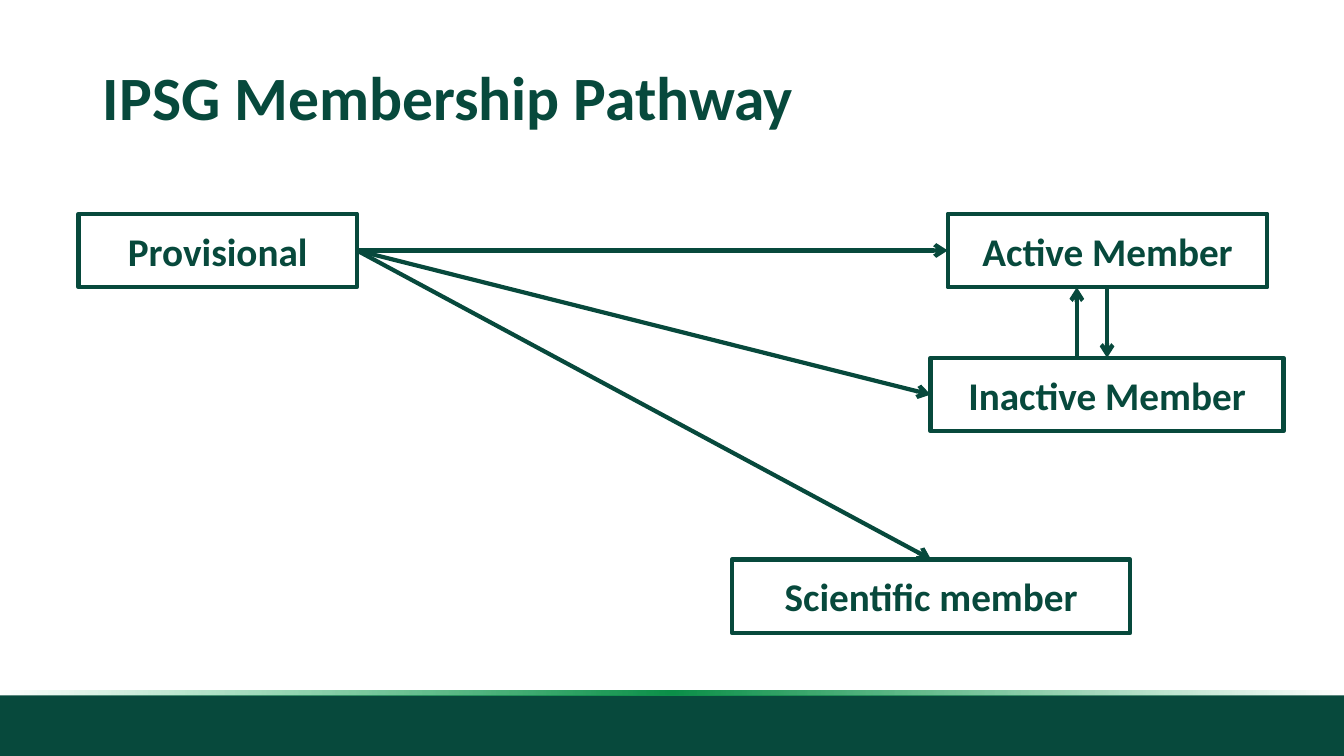
"""Build the membership pathway slide."""
from dataclasses import dataclass

from lxml import etree
from pptx import Presentation
from pptx.dml.color import RGBColor
from pptx.enum import shapes, text
from pptx.oxml.ns import qn
from pptx.util import Inches, Pt

TITLE = "IPSG Membership Pathway"
BOX_HEIGHT = 0.73
BOXES = {
    "Active Member": (9.4, 2.12, 3.17),
    "Provisional": (0.78, 2.12, 2.76),
    "Inactive Member": (9.23, 3.55, 3.5),
    "Scientific member": (7.26, 5.55, 3.95),
}
TOP, LEFT, RIGHT = 0, 1, 3
PATHS = [("Active Member", LEFT), ("Inactive Member", LEFT), ("Scientific member", TOP)]
RETURN_X, LEAVE_X = 10.68, 10.98
BAND_TOP = 6.9
GLOW_HEIGHT = 0.05
GLOW_STOPS = [(0, "0D9D4F", 0), (50, "0C9049", 100), (100, "0FAB56", 0)]


@dataclass(frozen=True)
class Theme:
    green: RGBColor = RGBColor.from_string("07493C")
    font: str = "Calibri"
    title: int = 44
    label: int = 28
    line: int = 3


THEME = Theme()


def write(sp, words, size, align, spacing=1.0):
    """Write one bold, vertically centred paragraph in a shape."""
    tf = sp.text_frame
    tf.word_wrap = True
    tf.auto_size = text.MSO_AUTO_SIZE.NONE
    tf.vertical_anchor = text.MSO_ANCHOR.MIDDLE
    p = tf.paragraphs[0]
    p.alignment = align
    p.line_spacing = spacing
    r = p.add_run()
    r.text = words
    r.font.name, r.font.size, r.font.bold = THEME.font, Pt(size), True
    r.font.color.rgb = THEME.green


def add_rect(s, left, top, width, height):
    """Add a rectangle without shadow."""
    sp = s.shapes.add_shape(shapes.MSO_SHAPE.RECTANGLE, *map(Inches, (left, top, width, height)))
    sp.shadow.inherit = False
    return sp


def add_footer(s, width):
    """Add the footer band and the fading strip above it."""
    band = add_rect(s, 0, BAND_TOP, width, 7.5 - BAND_TOP)
    band.fill.solid()
    band.fill.fore_color.rgb = THEME.green
    band.line.fill.background()
    glow = add_rect(s, 0, BAND_TOP - GLOW_HEIGHT, width, GLOW_HEIGHT)
    glow.line.fill.background()
    glow.fill.gradient()
    glow.fill.gradient_angle = 180
    stops = glow._element.spPr.find(".//" + qn("a:gsLst"))
    for old in list(stops):
        stops.remove(old)
    for pos, color, alpha in GLOW_STOPS:
        gs = etree.SubElement(stops, qn("a:gs"), pos=str(pos * 1000))
        clr = etree.SubElement(gs, qn("a:srgbClr"), val=color)
        etree.SubElement(clr, qn("a:alpha"), val=str(alpha * 1000))


def add_box(s, label, left, top, width):
    """Add one outlined membership box."""
    sp = add_rect(s, left, top, width, BOX_HEIGHT)
    sp.fill.background()
    sp.line.color.rgb = THEME.green
    sp.line.width = Pt(THEME.line)
    write(sp, label, THEME.label, text.PP_ALIGN.CENTER)
    return sp


def add_arrow(s, x1=0, y1=0, x2=0, y2=0):
    """Add a straight arrow that points at its end."""
    c = s.shapes.add_connector(shapes.MSO_CONNECTOR.STRAIGHT, *map(Inches, (x1, y1, x2, y2)))
    c.line.color.rgb = THEME.green
    c.line.width = Pt(THEME.line)
    etree.SubElement(c.line._get_or_add_ln(), qn("a:tailEnd"), type="arrow")
    etree.SubElement(c._element.spPr, qn("a:effectLst"))
    return c


def main():
    """Assemble and save the slide."""
    prs = Presentation()
    prs.slide_width, prs.slide_height = Inches(13.33), Inches(7.5)
    s = prs.slides.add_slide(prs.slide_layouts[5])
    add_footer(s, 13.33)

    title = s.shapes.title
    title.left, title.top, title.width, title.height = map(Inches, (0.92, 0.4, 11.5, 1.19))
    write(title, TITLE, THEME.title, text.PP_ALIGN.LEFT, spacing=0.9)

    boxes = {label: add_box(s, label, *place) for label, place in BOXES.items()}
    for target, side in PATHS:
        c = add_arrow(s)
        c.begin_connect(boxes["Provisional"], RIGHT)
        c.end_connect(boxes[target], side)

    active_bottom = BOXES["Active Member"][1] + BOX_HEIGHT
    inactive_top = BOXES["Inactive Member"][1]
    add_arrow(s, RETURN_X, inactive_top, RETURN_X, active_bottom)
    add_arrow(s, LEAVE_X, active_bottom, LEAVE_X, inactive_top)
    prs.save("out.pptx")


if __name__ == "__main__":
    main()
